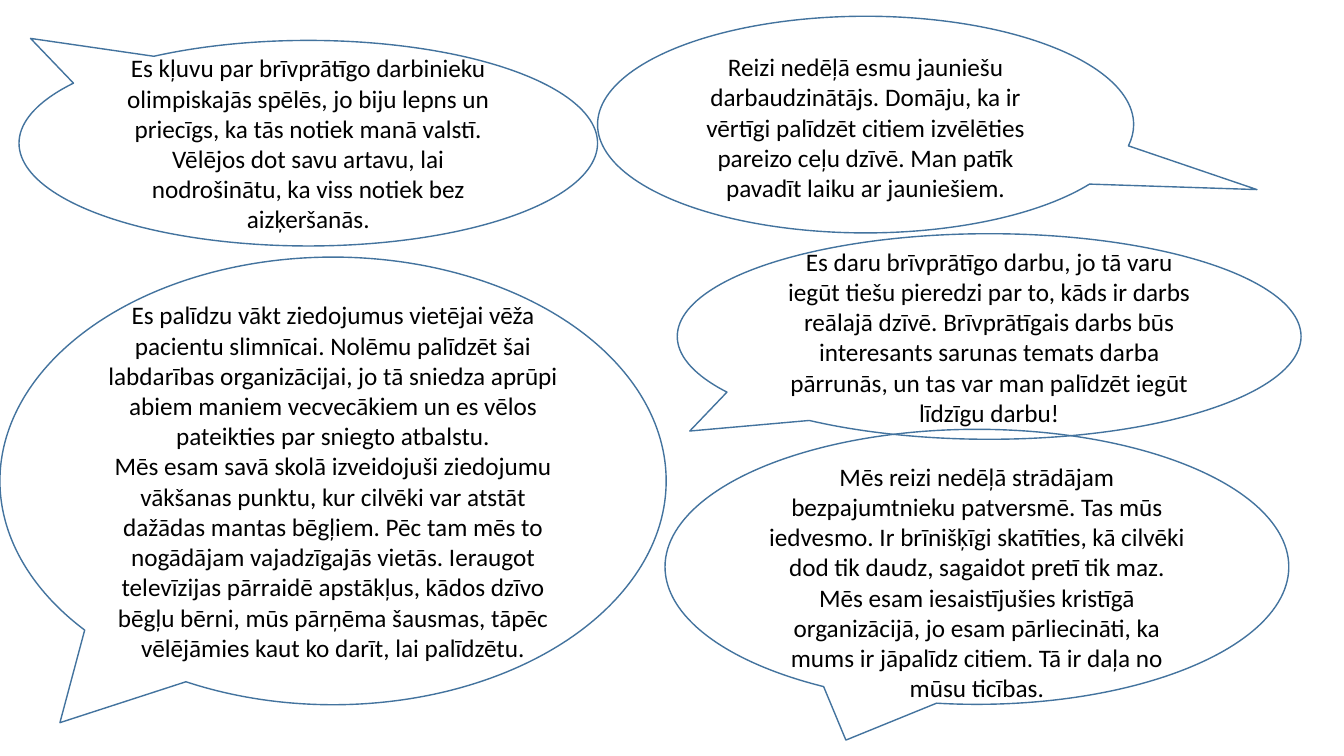
"""Build a slide of speech bubbles about volunteering."""
from pptx import Presentation
from pptx import util as u
from pptx.dml import color
from pptx.enum import shapes, text

INK = "000000"
EDGE = "43739E"

BUBBLES = [
    ((15.06, 0.41, 13.51, 5.46), (0.73, 0.3), 0.25, [
        "Reizi nedēļā esmu jauniešu darbaudzinātājs. Domāju, ka ir vērtīgi "
        "palīdzēt citiem izvēlēties pareizo ceļu dzīvē. Man patīk pavadīt "
        "laiku ar jauniešiem."]),
    ((17.07, 5.89, 15.72, 5.18), (-0.48, 0.46), 0.13, [
        "Es daru brīvprātīgo darbu, jo tā varu iegūt tiešu pieredzi par to, "
        "kāds ir darbs reālajā dzīvē. Brīvprātīgais darbs būs interesants "
        "sarunas temats darba pārrunās, un tas var man palīdzēt iegūt "
        "līdzīgu darbu!"]),
    ((0, 6.48, 16.79, 11.28), (-0.41, 0.54), 0.13, [
        "Es palīdzu vākt ziedojumus vietējai vēža pacientu slimnīcai. Nolēmu "
        "palīdzēt šai labdarības organizācijai, jo tā sniedza aprūpi abiem "
        "maniem vecvecākiem un es vēlos pateikties par sniegto atbalstu.",
        "Mēs esam savā skolā izveidojuši ziedojumu vākšanas punktu, kur "
        "cilvēki var atstāt dažādas mantas bēgļiem. Pēc tam mēs to nogādājam "
        "vajadzīgajās vietās. Ieraugot televīzijas pārraidē apstākļus, kādos "
        "dzīvo bēgļu bērni, mūs pārņēma šausmas, tāpēc vēlējāmies kaut ko "
        "darīt, lai palīdzētu."]),
    ((16.76, 10.82, 15.72, 6.93), (-0.21, 0.63), 0.89, [
        "Mēs reizi nedēļā strādājam bezpajumtnieku patversmē. Tas mūs "
        "iedvesmo. Ir brīnišķīgi skatīties, kā cilvēki dod tik daudz, "
        "sagaidot pretī tik maz. Mēs esam iesaistījušies kristīgā "
        "organizācijā, jo esam pārliecināti, ka mums ir jāpalīdz citiem. "
        "Tā ir daļa no mūsu ticības."]),
    ((0.48, 1.02, 14.58, 5.18), (-0.48, -0.51), 0.13, [
        "Es kļuvu par brīvprātīgo darbinieku olimpiskajās spēlēs, jo biju "
        "lepns un priecīgs, ka tās notiek manā valstī. Vēlējos dot savu "
        "artavu, lai nodrošinātu, ka viss notiek bez aizķeršanās."]),
]


def paint(target, tone):
    """Give a colour format the hex colour."""
    target.rgb = color.RGBColor.from_string(tone)


def write(frame, lines, top):
    """Fill a text frame with centred paragraphs."""
    frame.word_wrap = True
    frame.vertical_anchor = text.MSO_ANCHOR.MIDDLE
    frame.margin_top = u.Cm(top)
    frame.text = "\n".join(lines)
    for para in frame.paragraphs:
        para.alignment = text.PP_ALIGN.CENTER
        for run in para.runs:
            run.font.name = "Calibri"
            run.font.size = u.Pt(18)
            paint(run.font.color, INK)


def bubble(slide, box, tip, top, lines):
    """Add an outlined speech bubble whose tail ends at tip."""
    shape = slide.shapes.add_shape(
        shapes.MSO_SHAPE.OVAL_CALLOUT, *[u.Cm(side) for side in box])
    shape.adjustments[0], shape.adjustments[1] = tip
    shape.shadow.inherit = False
    shape.fill.background()
    paint(shape.line.color, EDGE)
    shape.line.width = u.Pt(1)
    write(shape.text_frame, lines, top)


def main():
    """Make the deck and save it."""
    deck = Presentation()
    deck.slide_width, deck.slide_height = u.Cm(33.87), u.Cm(19.05)
    slide = deck.slides.add_slide(deck.slide_layouts[6])
    for item in BUBBLES:
        bubble(slide, *item)
    deck.save("out.pptx")


if __name__ == "__main__":
    main()
